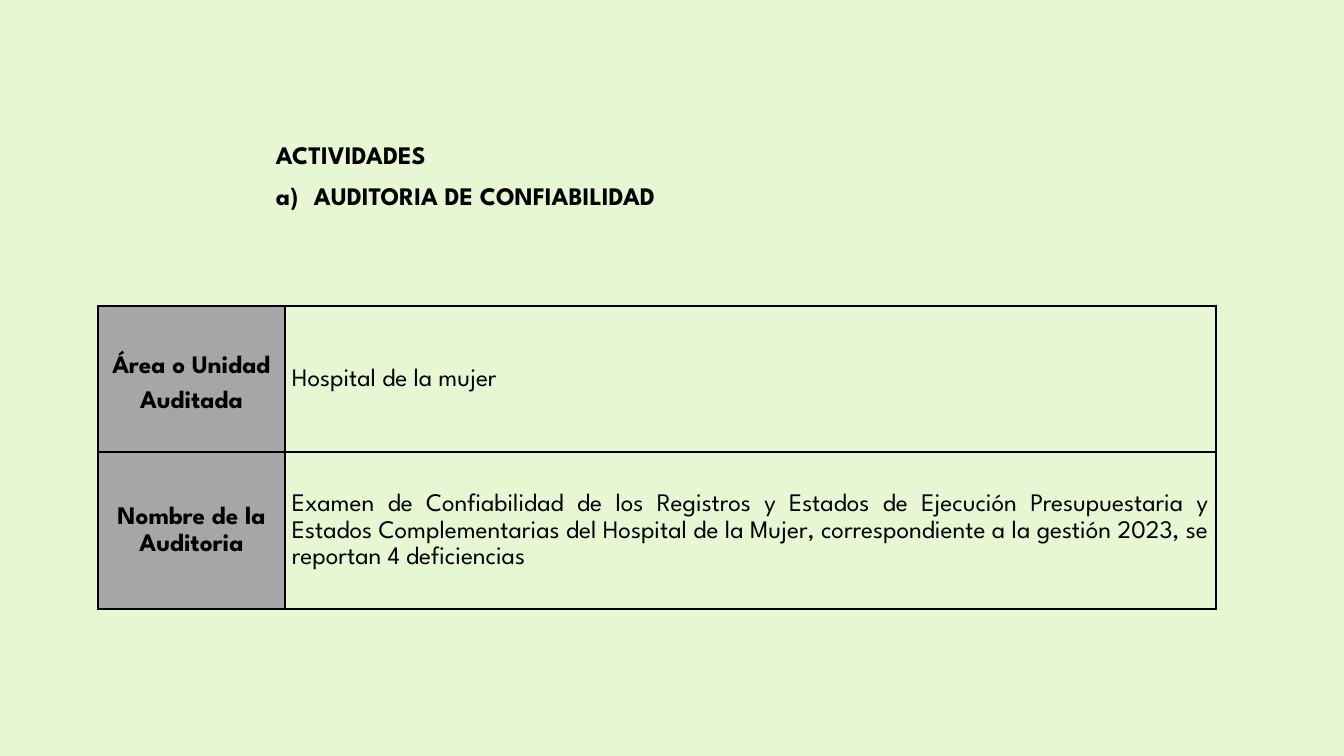
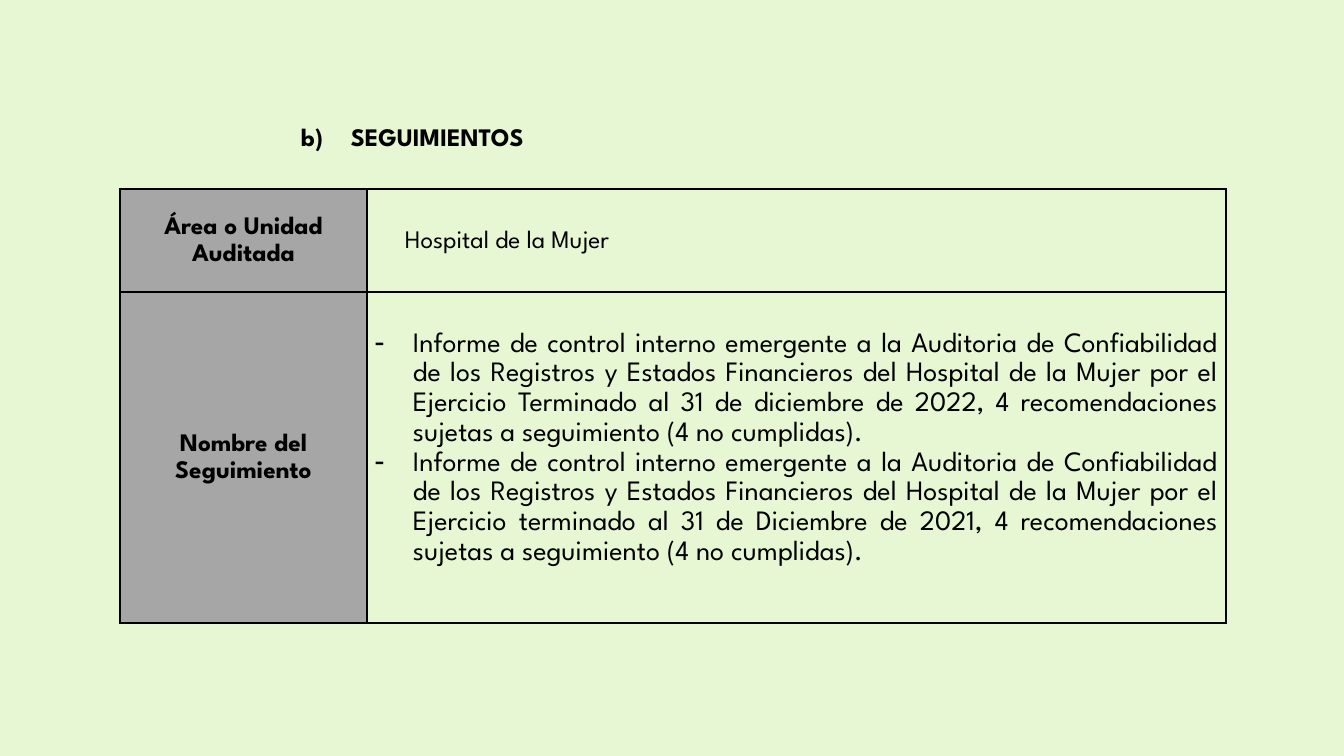
from lxml.etree import SubElement
from pptx import Presentation
from pptx.dml.color import RGBColor
from pptx.enum.text import MSO_ANCHOR as Anchor, PP_ALIGN as Align
from pptx.oxml.ns import qn
from pptx.util import Emu, Pt

SCALE = 914400 / 100.8
AREA_LABEL = "Área o Unidad Auditada"
FOLLOW_UP = (
    "Informe de control interno emergente a la Auditoria de Confiabilidad de los "
    "Registros y Estados Financieros del Hospital de la Mujer por el Ejercicio {}, "
    "4 recomendaciones sujetas a seguimiento (4 no cumplidas)."
)


def px(length):
    return Emu(round(length * SCALE))


def color(value):
    return RGBColor.from_string(value)


class Deck:
    FONT = "League Spartan"
    BACKGROUND = "E7F6D3"
    INK = "000000"
    LABEL_FILL = "A6A6A6"

    def __init__(self):
        self.presentation = Presentation()
        self.presentation.slide_width = px(1344)
        self.presentation.slide_height = px(756)
        self.slide = None

    def add_slide(self):
        self.slide = self.presentation.slides.add_slide(self.presentation.slide_layouts[6])
        fill = self.slide.background.fill
        fill.solid()
        fill.fore_color.rgb = color(self.BACKGROUND)

    def set_text(self, paragraph, text, size=18, bold=False, align=Align.LEFT, spacing=1.0):
        paragraph.text = text
        paragraph.alignment = align
        paragraph.line_spacing = spacing
        for run in paragraph.runs:
            run.font.name = self.FONT
            run.font.size = Pt(size)
            run.font.bold = bold
            run.font.color.rgb = color(self.INK)

    def indent(self, paragraph, left, first=0):
        properties = paragraph._p.get_or_add_pPr()
        properties.set("marL", str(px(left)))
        properties.set("indent", str(px(first)))
        return properties

    def number(self, paragraph, start, hang):
        properties = self.indent(paragraph, hang, -hang)
        SubElement(properties, qn("a:buAutoNum"), type="alphaLcParenR", startAt=str(start))

    def dash(self, paragraph, hang):
        properties = self.indent(paragraph, hang, -hang)
        SubElement(properties, qn("a:buChar"), char="-")

    def heading(self, left, top, width, height, section, start, hang, title=None, spacing=1.0):
        frame = self.slide.shapes.add_textbox(px(left), px(top), px(width), px(height)).text_frame
        frame.word_wrap = True
        paragraph = frame.paragraphs[0]
        if title:
            self.set_text(paragraph, title, bold=True, spacing=spacing)
            paragraph = frame.add_paragraph()
            paragraph.space_before = Pt(10)
        self.number(paragraph, start, hang)
        self.set_text(paragraph, section, bold=True, spacing=spacing)

    def table(self, left, top, columns, rows, margin):
        shape = self.slide.shapes.add_table(
            len(rows), len(columns), px(left), px(top), px(sum(columns)), px(sum(rows)))
        table = shape.table
        table.first_row = table.horz_banding = False
        for column, width in zip(table.columns, columns):
            column.width = px(width)
        for row, height in zip(table.rows, rows):
            row.height = px(height)
        for cell in table.iter_cells():
            self.border(cell)
            cell.fill.background()
            cell.vertical_anchor = Anchor.MIDDLE
            cell.margin_left = cell.margin_right = px(margin)
            cell.margin_top = cell.margin_bottom = 0
        return table

    def border(self, cell):
        properties = cell._tc.get_or_add_tcPr()
        for side in ("lnL", "lnR", "lnT", "lnB"):
            line = SubElement(properties, qn(f"a:{side}"), w=str(Pt(1)))
            fill = SubElement(line, qn("a:solidFill"))
            SubElement(fill, qn("a:srgbClr"), val=self.INK)

    def label(self, cell, text, spacing=1.15):
        cell.fill.solid()
        cell.fill.fore_color.rgb = color(self.LABEL_FILL)
        self.set_text(cell.text_frame.paragraphs[0], text, bold=True, align=Align.CENTER, spacing=spacing)

    def value(self, cell, text, left=0):
        paragraph = cell.text_frame.paragraphs[0]
        self.indent(paragraph, left)
        self.set_text(paragraph, text, align=Align.JUSTIFY, spacing=1.15)

    def dash_list(self, cell, items, hang):
        frame = cell.text_frame
        for index, item in enumerate(items):
            paragraph = frame.add_paragraph() if index else frame.paragraphs[0]
            self.dash(paragraph, hang)
            self.set_text(paragraph, item, size=20, align=Align.JUSTIFY, spacing=1.15)


def reliability_slide(deck):
    deck.add_slide()
    deck.heading(266, 138, 781, 93, "AUDITORIA DE CONFIABILIDAD", start=1, hang=38,
                 title="ACTIVIDADES", spacing=0.9)
    table = deck.table(98, 306, [187, 931], [146, 157], margin=7)
    deck.label(table.cell(0, 0), AREA_LABEL, spacing=1.5)
    deck.value(table.cell(0, 1), "Hospital de la mujer")
    deck.label(table.cell(1, 0), "Nombre de la Auditoria")
    deck.value(table.cell(1, 1), (
        "Examen de Confiabilidad de los Registros y Estados de Ejecución Presupuestaria y "
        "Estados Complementarias del Hospital de la Mujer, correspondiente a la gestión 2023, "
        "se reportan 4 deficiencias"))


def follow_up_slide(deck):
    deck.add_slide()
    deck.heading(291, 116, 531, 40, "SEGUIMIENTOS", start=2, hang=50)
    table = deck.table(120, 189, [247, 859], [103, 331], margin=8)
    deck.label(table.cell(0, 0), AREA_LABEL)
    deck.value(table.cell(0, 1), "Hospital de la Mujer", left=30)
    deck.label(table.cell(1, 0), "Nombre del Seguimiento")
    periods = ["Terminado al 31 de diciembre de 2022", "terminado al 31 de Diciembre de 2021"]
    reports = table.cell(1, 1)
    reports.margin_bottom = px(20)
    deck.dash_list(reports, [FOLLOW_UP.format(period) for period in periods], hang=38)


def main():
    deck = Deck()
    reliability_slide(deck)
    follow_up_slide(deck)
    deck.presentation.save("out.pptx")


if __name__ == "__main__":
    main()
